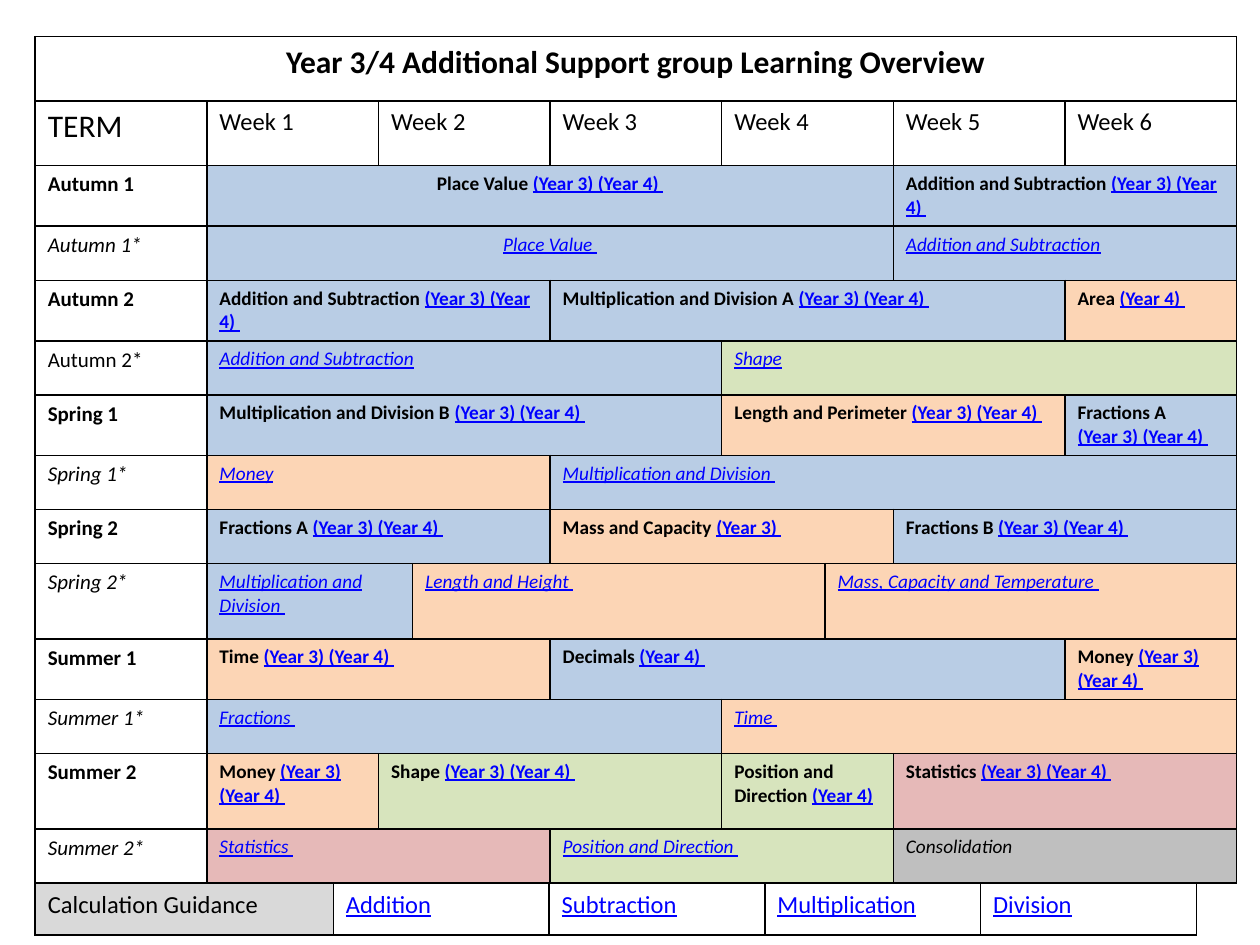
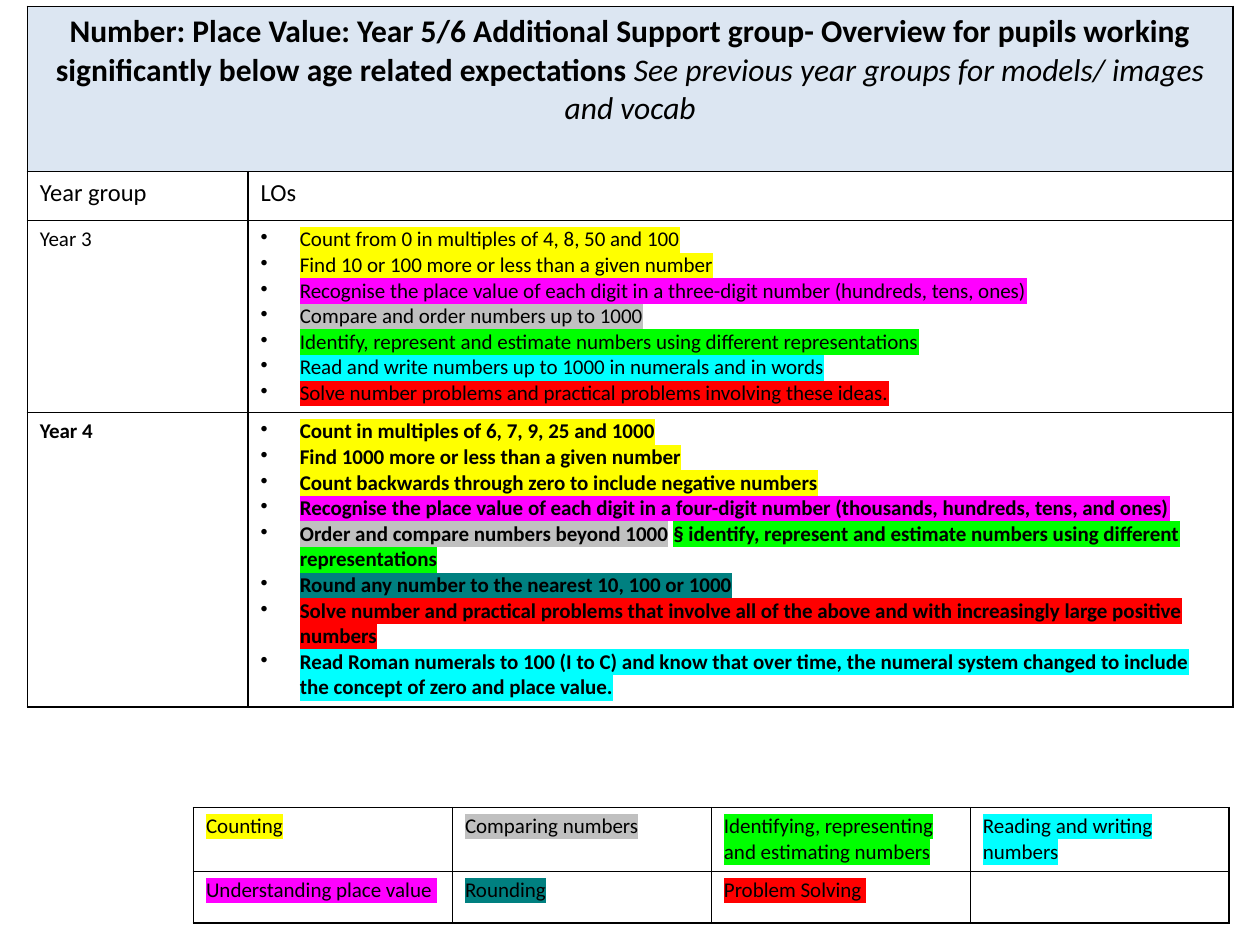
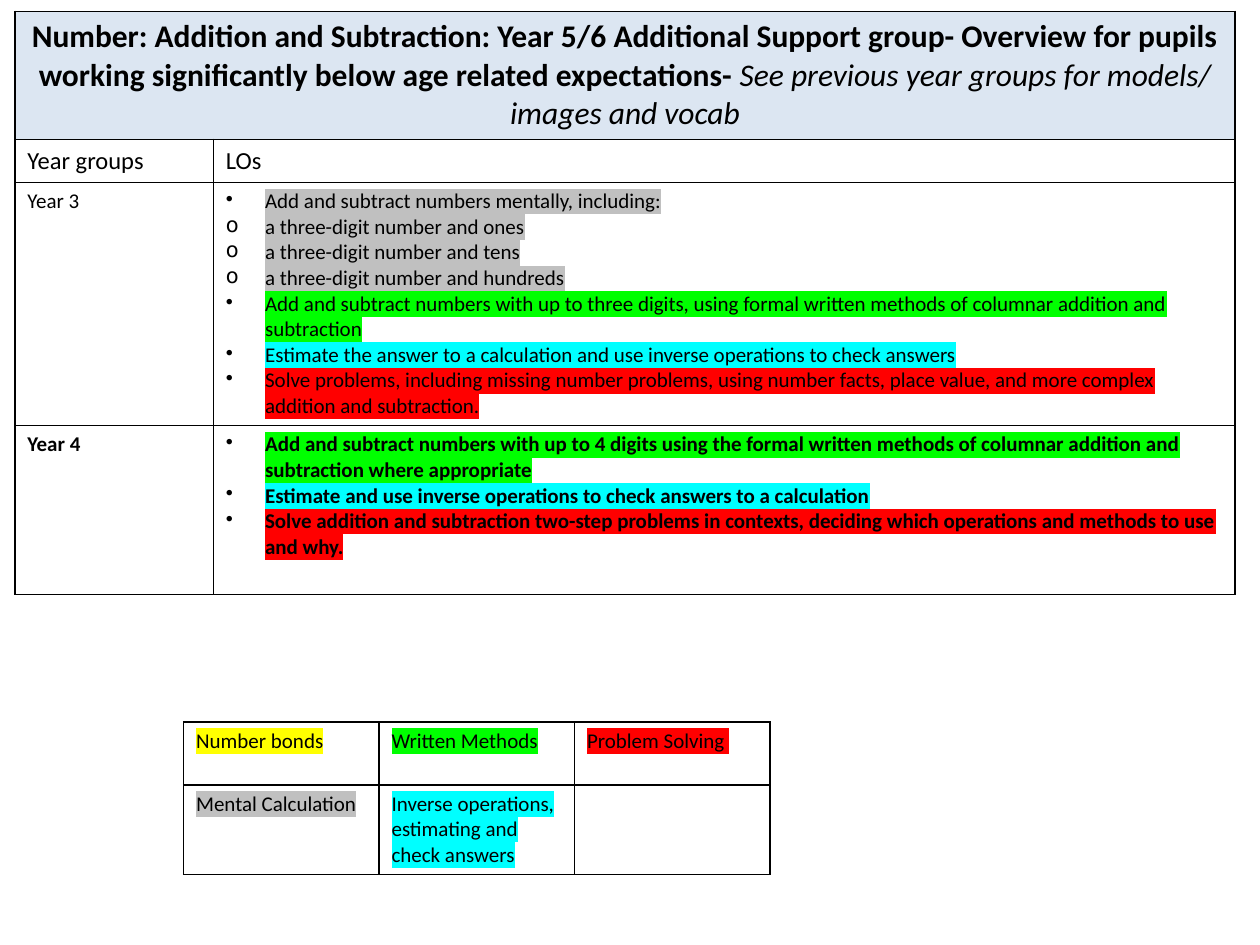
from dataclasses import dataclass, field, replace

from lxml import etree
from pptx import Presentation
from pptx import util as u
from pptx.dml import color
from pptx.enum import text
from pptx.oxml import ns


@dataclass(frozen=True)
class Theme:
    font: str = "Calibri"
    ink: str = "000000"
    link: str = "0000FF"
    white: str = "FFFFFF"
    number: str = "B9CDE5"
    measure: str = "FCD5B5"
    shape: str = "D7E4BD"
    data: str = "E6B9B8"
    spare: str = "BFBFBF"
    guide: str = "D9D9D9"
    banner: str = "DCE6F2"
    yellow: str = "FFFF00"
    silver: str = "C0C0C0"
    green: str = "00FF00"
    cyan: str = "00FFFF"
    pink: str = "FF00FF"
    teal: str = "008080"
    red: str = "FF0000"
    title: int = 18
    head: int = 14
    body: int = 12
    small: int = 11
    border: float = 1


T = Theme()


@dataclass(frozen=True)
class Run:
    words: str
    size: float = T.body
    bold: bool = False
    slant: bool = False
    link: bool = False
    mark: str = ""


@dataclass(frozen=True)
class Para:
    runs: list[Run]
    dot: str = ""
    center: bool = False


@dataclass(frozen=True)
class Cell:
    paras: list[Para] = field(default_factory=list)
    span: int = 1
    fill: str = T.white


@dataclass(frozen=True)
class Block:
    topic: str
    years: str
    span: int
    fill: str
    center: bool = False


@dataclass(frozen=True)
class Term:
    name: str
    height: float
    blocks: list[Block]
    slant: bool = False


@dataclass(frozen=True)
class Goal:
    pieces: list[tuple[str, str]]
    dot: str = "•"


@dataclass(frozen=True)
class Unit:
    title: str
    label: str
    left: float
    top: float
    cols: list[float]
    rows: list[float]
    years: dict[str, list[Goal]]


def plain(words: str, size: float = T.body, **style) -> Cell:
    return Cell([Para([Run(words, size, **style)])])


def write(para, plan: Para) -> None:
    if plan.center:
        para.alignment = text.PP_ALIGN.CENTER
    if plan.dot:
        props = para._p.get_or_add_pPr()
        props.set("marL", str(u.Cm(0.79)))
        props.set("indent", str(u.Cm(-0.79)))
        etree.SubElement(props, ns.qn("a:buChar")).set("char", plan.dot)
    for piece in plan.runs:
        run = para.add_run()
        run.text = piece.words
        font = run.font
        font.size, font.bold, font.italic = u.Pt(piece.size), piece.bold, piece.slant
        font.underline = piece.link
        font.color.rgb = color.RGBColor.from_string(T.link if piece.link else T.ink)
        if piece.mark:
            mark = etree.SubElement(run._r.get_or_add_rPr(), ns.qn("a:highlight"))
            etree.SubElement(mark, ns.qn("a:srgbClr")).set("val", piece.mark)
        font.name = T.font


def edge(cell) -> None:
    props = cell._tc.get_or_add_tcPr()
    for place, side in enumerate(("lnL", "lnR", "lnT", "lnB")):
        line = etree.Element(ns.qn(f"a:{side}"), w=str(u.Pt(T.border)))
        fill = etree.SubElement(line, ns.qn("a:solidFill"))
        etree.SubElement(fill, ns.qn("a:srgbClr")).set("val", T.ink)
        props.insert(place, line)


def grid(slide, left: float, top: float, cols: list[float],
         rows: list[float], cells: list[list[Cell]]) -> None:
    frame = slide.shapes.add_table(
        len(rows), len(cols), u.Cm(left), u.Cm(top), u.Cm(sum(cols)), u.Cm(sum(rows)))
    table = frame.table
    table.first_row = table.horz_banding = False
    for col, width in zip(table.columns, cols):
        col.width = u.Cm(width)
    for row, height in zip(table.rows, rows):
        row.height = u.Cm(height)
    for cell in table.iter_cells():
        cell.fill.solid()
        cell.fill.fore_color.rgb = color.RGBColor.from_string(T.white)
        edge(cell)
    for y, line in enumerate(cells):
        x = 0
        for item in line:
            cell = table.cell(y, x)
            if item.span > 1:
                cell.merge(table.cell(y, x + item.span - 1))
            cell.fill.fore_color.rgb = color.RGBColor.from_string(item.fill)
            body = cell.text_frame
            for n, para in enumerate(item.paras):
                write(body.add_paragraph() if n else body.paragraphs[0], para)
            x += item.span


def lesson(block: Block, star: bool) -> Cell:
    style = Run("", T.small, bold=not star, slant=star)
    topic = replace(style, words=block.topic.rstrip("\n"))
    years = replace(style, words=block.years, link=True)
    if block.topic.endswith("\n"):
        paras = [Para([topic]), Para([years])]
    else:
        runs = [run for run in (topic, years) if run.words]
        paras = [Para(runs, center=block.center)]
    return Cell(paras, block.span, block.fill)


def year_plan(slide) -> None:
    links = [plain(word, T.head, link=True)
             for word in ("Addition", "Subtraction", "Multiplication", "Division")]
    guide = replace(plain("Calculation Guidance", T.head), fill=T.guide)
    grid(slide, 0.71, 17.81, [6.01] + [4.35] * 4, [1.04], [[guide, *links]])

    title = Run("Year 3/4 Additional Support group Learning Overview", T.title, bold=True)
    weeks = [replace(plain(f"Week {n}", T.head), span=span)
             for n, span in enumerate((1, 2, 1, 2, 1, 1), 1)]
    cells = [[Cell([Para([title], center=True)], 9)], [plain("TERM", T.title), *weeks]]
    for term in TERMS:
        star = term.name.endswith("*")
        name = plain(term.name, bold=not star, slant=term.slant)
        cells.append([name] + [lesson(block, star) for block in term.blocks])
    week = 3.46
    cols = [week, week, 0.69, 2.77, week, 2.08, 1.38, week, week]
    grid(slide, 0.71, 0.74, cols, [1.3, 1.3] + [term.height for term in TERMS], cells)


def unit_plan(slide, unit: Unit) -> None:
    title = [Run(unit.title, T.title, bold=True),
             Run("See previous year groups for models/ images and vocab", T.title, slant=True)]
    cells = [[Cell([Para(title, center=True)], 2, T.banner)],
             [plain(unit.label, T.head), plain("LOs", T.head)]]
    for year, goals in unit.years.items():
        bold = year == "Year 4"
        paras = [Para([Run(words, bold=bold, mark=mark) for mark, words in aim.pieces], aim.dot)
                 for aim in goals]
        cells.append([plain(year, bold=bold), Cell(paras)])
    grid(slide, unit.left, unit.top, unit.cols, unit.rows, cells)


def legend(slide, left: float, top: float, width: float, rows: list[float],
           keys: list[list[tuple[str, str]]]) -> None:
    cells = [[plain(words, mark=mark) for mark, words in line] for line in keys]
    grid(slide, left, top, [width] * len(keys[0]), rows, cells)


def goal(mark: str, words: str, dot: str = "•") -> Goal:
    return Goal([(mark, words)], dot)


BOTH = "(Year 3) (Year 4) "
LOW, MID, HIGH = 1.09, 1.22, 1.52

TERMS = [
    Term("Autumn 1", MID, [
        Block("Place Value ", BOTH, 6, T.number, True),
        Block("Addition and Subtraction ", BOTH, 2, T.number)]),
    Term("Autumn 1*", LOW, [
        Block("", "Place Value ", 6, T.number, True),
        Block("", "Addition and Subtraction", 2, T.number)], True),
    Term("Autumn 2", MID, [
        Block("Addition and Subtraction ", BOTH, 3, T.number),
        Block("Multiplication and Division A ", BOTH, 4, T.number),
        Block("Area ", "(Year 4) ", 1, T.measure)]),
    Term("Autumn 2*", LOW, [
        Block("", "Addition and Subtraction", 4, T.number),
        Block("", "Shape", 4, T.shape)]),
    Term("Spring 1", MID, [
        Block("Multiplication and Division B ", BOTH, 4, T.number),
        Block("Length and Perimeter ", BOTH, 3, T.measure),
        Block("Fractions A\n", BOTH, 1, T.number)]),
    Term("Spring 1*", LOW, [
        Block("", "Money", 3, T.measure),
        Block("", "Multiplication and Division ", 5, T.number)], True),
    Term("Spring 2", LOW, [
        Block("Fractions A ", BOTH, 3, T.number),
        Block("Mass and Capacity ", "(Year 3) ", 3, T.measure),
        Block("Fractions B ", BOTH, 2, T.number)]),
    Term("Spring 2*", HIGH, [
        Block("", "Multiplication and Division ", 2, T.number),
        Block("", "Length and Height ", 3, T.measure),
        Block("", "Mass, Capacity and Temperature ", 3, T.measure)], True),
    Term("Summer 1", MID, [
        Block("Time ", BOTH, 3, T.measure),
        Block("Decimals ", "(Year 4) ", 4, T.number),
        Block("Money ", BOTH, 1, T.measure)]),
    Term("Summer 1*", LOW, [
        Block("", "Fractions ", 4, T.number),
        Block("", "Time ", 4, T.measure)], True),
    Term("Summer 2", HIGH, [
        Block("Money ", BOTH, 1, T.measure),
        Block("Shape ", BOTH, 3, T.shape),
        Block("Position and Direction ", "(Year 4)", 2, T.shape),
        Block("Statistics ", BOTH, 2, T.data)]),
    Term("Summer 2*", LOW, [
        Block("", "Statistics ", 3, T.data),
        Block("", "Position and Direction ", 3, T.shape),
        Block("Consolidation", "", 2, T.spare)], True),
]

GROUP = "Year 5/6 Additional Support group- Overview for pupils working significantly below age related expectations"

PLACES = Unit(
    f"Number: Place Value: {GROUP} ", "Year group", 0.55, 0.13,
    [4.45, 19.86], [3.33, 0.99, 3.87, 5.93], {
        "Year 3": [
            goal(T.yellow, "Count from 0 in multiples of 4, 8, 50 and 100"),
            goal(T.yellow, "Find 10 or 100 more or less than a given number"),
            goal(T.pink, "Recognise the place value of each digit in a three-digit number (hundreds, tens, ones)"),
            goal(T.silver, "Compare and order numbers up to 1000"),
            goal(T.green, "Identify, represent and estimate numbers using different representations"),
            goal(T.cyan, "Read and write numbers up to 1000 in numerals and in words"),
            goal(T.red, "Solve number problems and practical problems involving these ideas.")],
        "Year 4": [
            goal(T.yellow, "Count in multiples of 6, 7, 9, 25 and 1000"),
            goal(T.yellow, "Find 1000 more or less than a given number"),
            goal(T.yellow, "Count backwards through zero to include negative numbers"),
            goal(T.pink, "Recognise the place value of each digit in a four-digit number (thousands, hundreds, tens, and ones)"),
            Goal([(T.silver, "Order and compare numbers beyond 1000"), ("", " "),
                  (T.green, "§ identify, represent and estimate numbers using different representations")]),
            goal(T.teal, "Round any number to the nearest 10, 100 or 1000"),
            goal(T.red, "Solve number and practical problems that involve all of the above and with increasingly large positive numbers"),
            goal(T.cyan, "Read Roman numerals to 100 (I to C) and know that over time, the numeral system changed to include the concept of zero and place value.")]})

SUMS = Unit(
    f"Number: Addition and Subtraction: {GROUP}- ", "Year groups", 0.3, 0.23,
    [4.0, 20.6], [2.57, 0.87, 4.9, 3.4], {
        "Year 3": [
            goal(T.silver, "Add and subtract numbers mentally, including:"),
            *(goal(T.silver, f"a three-digit number and {kind}", "o")
              for kind in ("ones", "tens", "hundreds")),
            goal(T.green, "Add and subtract numbers with up to three digits, using formal written methods of columnar addition and subtraction"),
            goal(T.cyan, "Estimate the answer to a calculation and use inverse operations to check answers"),
            goal(T.red, "Solve problems, including missing number problems, using number facts, place value, and more complex addition and subtraction.")],
        "Year 4": [
            goal(T.green, "Add and subtract numbers with up to 4 digits using the formal written methods of columnar addition and subtraction where appropriate"),
            goal(T.cyan, "Estimate and use inverse operations to check answers to a calculation"),
            goal(T.red, "Solve addition and subtraction two-step problems in contexts, deciding which operations and methods to use and why.")]})

PLACE_KEYS = [
    [(T.yellow, "Counting"), (T.silver, "Comparing numbers"),
     (T.green, "Identifying, representing and estimating numbers"),
     (T.cyan, "Reading and writing numbers")],
    [(T.pink, "Understanding place value "), (T.teal, "Rounding"), (T.red, "Problem Solving ")],
]

SUM_KEYS = [
    [(T.yellow, "Number bonds"), (T.green, "Written Methods"), (T.red, "Problem Solving ")],
    [(T.silver, "Mental Calculation"),
     (T.cyan, "Inverse operations, estimating and check answers")],
]


def main() -> None:
    deck = Presentation()
    deck.slide_width, deck.slide_height = u.Cm(25.4), u.Cm(19.05)
    first, second, third = (deck.slides.add_slide(deck.slide_layouts[6]) for _ in range(3))
    year_plan(first)
    legend(second, 3.9, 16.28, 5.22, [1.27, 1.04], PLACE_KEYS)
    unit_plan(second, PLACES)
    unit_plan(third, SUMS)
    legend(third, 3.7, 14.55, 3.94, [1.27, 1.81], SUM_KEYS)
    deck.save("out.pptx")


if __name__ == "__main__":
    main()
